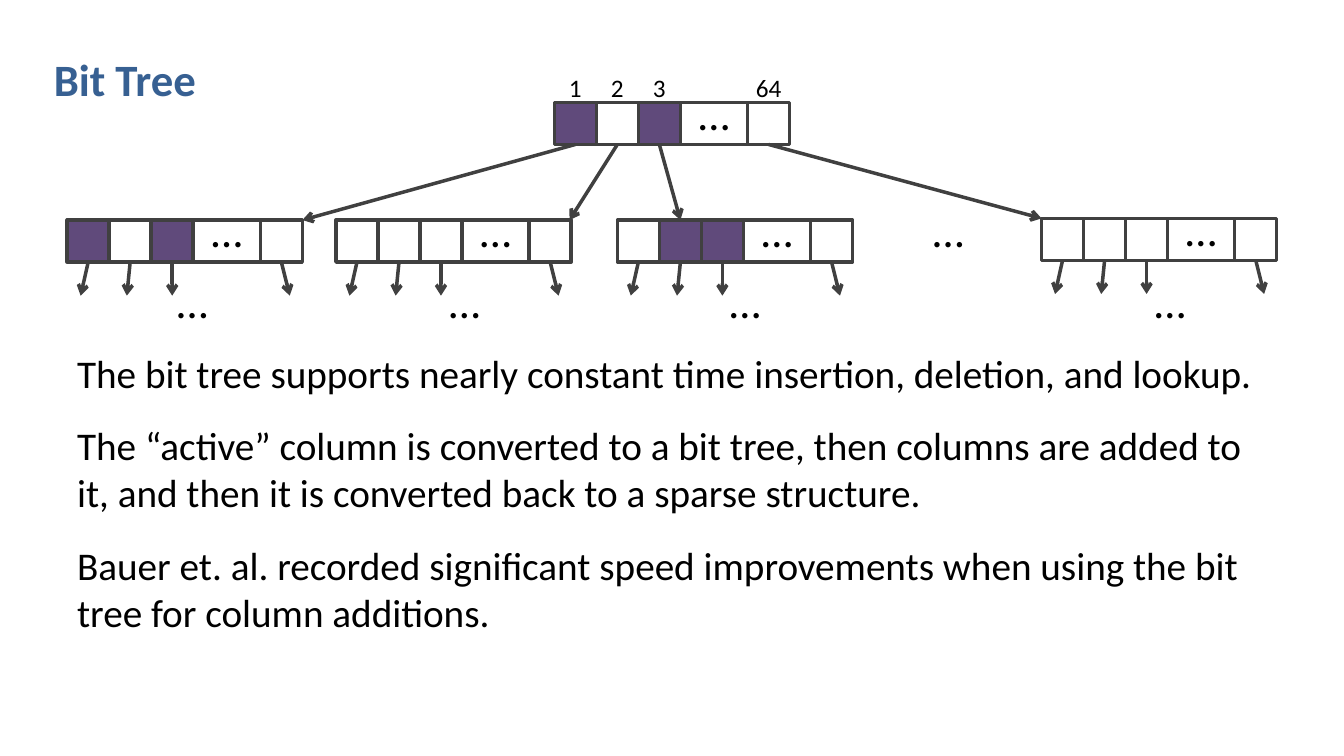
from lxml.etree import SubElement
from pptx import Presentation
from pptx.dml.color import RGBColor
from pptx.enum.shapes import MSO_CONNECTOR, MSO_SHAPE
from pptx.enum.text import MSO_ANCHOR, MSO_AUTO_SIZE, PP_ALIGN
from pptx.oxml.ns import qn
from pptx.util import Pt

PX = 7620  # 120 px to the inch
FONT = "Calibri"
BLUE = RGBColor(0x37, 0x60, 0x92)
PURPLE = RGBColor(0x60, 0x4A, 0x7B)
GREY = RGBColor(0x40, 0x40, 0x40)
BLACK = RGBColor(0, 0, 0)

TITLE = "Bit Tree"
NOTES = [
    "The bit tree supports nearly constant time insertion, deletion, and lookup.",
    "The “active” column is converted to a bit tree, then columns are added to it, "
    "and then it is converted back to a sparse structure.",
    "Bauer et. al. recorded significant speed improvements when using the bit tree "
    "for column additions.",
]
DOTS = "…"

# Cells of every node: three bits, a wide gap with dots, the last bit
CELL = 50
CELL_WIDTHS = [CELL, CELL, CELL, 80, CELL]
CELL_LEFTS = [sum(CELL_WIDTHS[:index]) for index in range(len(CELL_WIDTHS))]
NODE_WIDTH = sum(CELL_WIDTHS)
GAP_CELL = 3
BIT_CELLS = [0, 1, 2, 4]
BIT_LABELS = ["1", "2", "3", "64"]

# left, top, set bits
ROOT = (660, 122, {0, 2})
# left, top, set bits, centre of the dots below
CHILDREN = [
    (80, 262, {0, 2}, 229),
    (400, 262, set(), 553),
    (735, 262, {1, 2}, 887),
    (1240, 260, set(), 1393),
]
# Where each root arrow meets its child, measured from the child's left
ARRIVALS = [NODE_WIDTH, NODE_WIDTH - 2, 75, 0]
LEAF_SHIFTS = [-9, -4, 0, 10]
LEAF_DROP = 40
SIBLING_DOTS_CENTRE = 1129


def place(shape, left, top, width, height):
    shape.left, shape.top = round(left * PX), round(top * PX)
    shape.width, shape.height = round(width * PX), round(height * PX)


def write(box, lines, size, color, align=PP_ALIGN.LEFT, bold=False, wrap=False):
    frame = box.text_frame
    frame.text = "\n".join(lines)
    frame.word_wrap = wrap
    frame.auto_size = MSO_AUTO_SIZE.SHAPE_TO_FIT_TEXT
    frame.vertical_anchor = MSO_ANCHOR.TOP
    for para in frame.paragraphs:
        para.alignment = align
        for span in para.runs:
            span.font.name = FONT
            span.font.size = Pt(size)
            span.font.bold = bold
            span.font.color.rgb = color


def add_label(page, text, centre, top, width, height, size):
    box = page.shapes.add_textbox(0, 0, 0, 0)
    place(box, centre - width / 2, top, width, height)
    write(box, [text], size, BLACK, PP_ALIGN.CENTER)


def add_dots(page, centre, top):
    add_label(page, DOTS, centre, top, 61, 77, 32)


def add_node(page, left, top, set_bits):
    for index, (offset, width) in enumerate(zip(CELL_LEFTS, CELL_WIDTHS)):
        cell = page.shapes.add_shape(MSO_SHAPE.RECTANGLE, 0, 0, 0, 0)
        place(cell, left + offset, top, width, CELL)
        cell.shadow.inherit = False
        cell.line.color.rgb = GREY
        cell.line.width = Pt(2.5)
        if index in set_bits:
            cell.fill.solid()
            cell.fill.fore_color.rgb = PURPLE
        else:
            cell.fill.background()
    add_dots(page, cell_centre(left, GAP_CELL), top - 26)


def cell_centre(left, index):
    return left + CELL_LEFTS[index] + CELL_WIDTHS[index] / 2


def add_arrow(page, *ends):
    arrow = page.shapes.add_connector(
        MSO_CONNECTOR.STRAIGHT, *(round(value * PX) for value in ends))
    arrow.line.color.rgb = GREY
    arrow.line.width = Pt(2.5)
    SubElement(arrow.line._get_or_add_ln(), qn("a:tailEnd"), type="arrow")
    SubElement(arrow._element.spPr, qn("a:effectLst"))


def main():
    deck = Presentation()
    deck.slide_width, deck.slide_height = 1600 * PX, 900 * PX
    page = deck.slides.add_slide(deck.slide_layouts[5])

    place(page.shapes.title, 52, 56, 196, 77)
    write(page.shapes.title, [TITLE], 32, BLUE, bold=True)

    root_left, root_top, root_bits = ROOT
    add_node(page, root_left, root_top, root_bits)
    for index, text in zip(BIT_CELLS, BIT_LABELS):
        width = 26 + 15 * len(text)
        add_label(page, text, cell_centre(root_left, index), 80, width, 48, 18)

    for (left, top, bits, dots_centre), root_cell, arrival in zip(
            CHILDREN, BIT_CELLS, ARRIVALS):
        add_node(page, left, top, bits)
        add_arrow(page, cell_centre(root_left, root_cell), root_top + CELL,
                  left + arrival, top)
        bottom = top + CELL
        for index, shift in zip(BIT_CELLS, LEAF_SHIFTS):
            start = cell_centre(left, index)
            add_arrow(page, start, bottom, start + shift, bottom + LEAF_DROP)
        add_dots(page, dots_centre, 320)
    add_dots(page, SIBLING_DOTS_CENTRE, 236)

    body = page.shapes.add_textbox(0, 0, 0, 0)
    place(body, 80, 410, 1440, 355)
    write(body, NOTES, 28, BLACK, wrap=True)
    for para in body.text_frame.paragraphs:
        para.space_after = Pt(18)

    deck.save("out.pptx")


if __name__ == "__main__":
    main()
